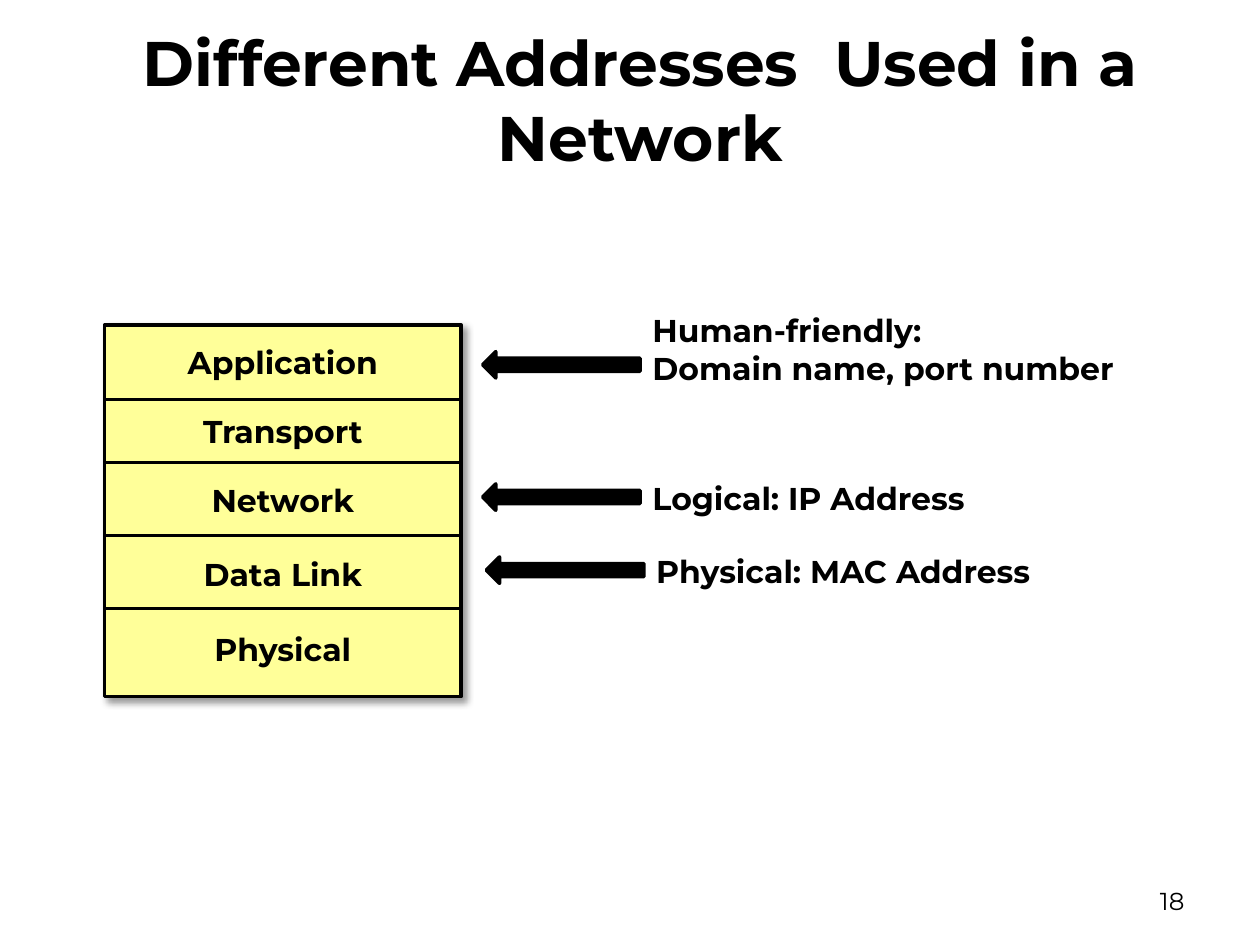
from lxml.etree import SubElement
from pptx import Presentation
from pptx.dml.color import RGBColor
from pptx.enum.shapes import MSO_CONNECTOR, MSO_SHAPE
from pptx.enum.text import MSO_ANCHOR, MSO_AUTO_SIZE, PP_ALIGN
from pptx.oxml.ns import qn
from pptx.util import Inches, Pt

COLORS = {"ink": "000000", "layer": "FFFF99", "page": "FFFFFF"}
FONT = "Montserrat"

STACK_LEFT, STACK_TOP, STACK_WIDTH, STACK_HEIGHT = 0.83, 2.58, 2.83, 2.95
LAYERS = [
    ("Application", 2.67),
    ("Transport", 3.22),
    ("Network", 3.77),
    ("Data Link", 4.36),
    ("Physical", 4.95),
]
DIVIDERS = [3.17, 3.67, 4.25, 4.83]
# Text, arrow left, arrow top, label top, label height
ADDRESSES = [
    ("Human-friendly:\vDomain name, port number", 3.83, 2.79, 2.42, 0.71),
    ("Logical: IP Address", 3.83, 3.84, 3.75, 0.4),
    ("Physical: MAC Address", 3.86, 4.42, 4.33, 0.4),
]
ARROW_WIDTH, ARROW_HEIGHT = 1.25, 0.21
LABEL_OFFSET, LABEL_WIDTH = 1.25, 4.64


def color(name):
    return RGBColor.from_string(COLORS[name])


class SlideBuilder:
    """Holds the current slide and draws elements in its style."""

    def __init__(self, page):
        self.page = page
        page.background.fill.solid()
        page.background.fill.fore_color.rgb = color("page")

    def text(self, words, left, top, width, height, size=18, bold=True,
             align=PP_ALIGN.LEFT, anchor=MSO_ANCHOR.TOP, grow=True):
        box = self.page.shapes.add_textbox(
            Inches(left), Inches(top), Inches(width), Inches(height))
        frame = box.text_frame
        frame.word_wrap = True
        frame.auto_size = MSO_AUTO_SIZE.SHAPE_TO_FIT_TEXT if grow else MSO_AUTO_SIZE.NONE
        frame.vertical_anchor = anchor
        frame.text = words
        for paragraph in frame.paragraphs:
            paragraph.alignment = align
            for span in paragraph.runs:
                span.font.name = FONT
                span.font.size = Pt(size)
                span.font.bold = bold
                span.font.color.rgb = color("ink")

    def shape(self, kind, left, top, width, height, fill):
        shape = self.page.shapes.add_shape(
            kind, Inches(left), Inches(top), Inches(width), Inches(height))
        shape.fill.solid()
        shape.fill.fore_color.rgb = color(fill)
        shape.line.color.rgb = color("ink")
        shape.line.width = Pt(2)
        shape.shadow.inherit = False
        return shape

    def shadow(self, shape, blur, distance, angle, opacity):
        """Add an outer shadow; lengths in points, angle in degrees, opacity in percent."""
        effects = shape._element.spPr.find(qn("a:effectLst"))
        outer = SubElement(
            effects, qn("a:outerShdw"), blurRad=str(Pt(blur)), dist=str(Pt(distance)),
            dir=str(angle * 60000), algn="tl", rotWithShape="0")
        tint = SubElement(outer, qn("a:srgbClr"), val=COLORS["ink"])
        SubElement(tint, qn("a:alpha"), val=str(opacity * 1000))

    def divider(self, left, top, width):
        line = self.page.shapes.add_connector(
            MSO_CONNECTOR.STRAIGHT, Inches(left), Inches(top),
            Inches(left + width), Inches(top))
        line.line.color.rgb = color("ink")
        line.line.width = Pt(1.5)
        SubElement(line._element.spPr, qn("a:effectLst"))


def main():
    deck = Presentation()
    deck.slide_width, deck.slide_height = Inches(10), Inches(7.5)
    builder = SlideBuilder(deck.slides.add_slide(deck.slide_layouts[6]))

    builder.text("Different Addresses  Used in a Network", 0.58, 0.33, 9, 0.91, size=36,
                 align=PP_ALIGN.CENTER, anchor=MSO_ANCHOR.MIDDLE, grow=False)
    builder.text("18", 7.17, 6.95, 2.33, 0.4, size=14, bold=False,
                 align=PP_ALIGN.RIGHT, anchor=MSO_ANCHOR.MIDDLE, grow=False)

    stack = builder.shape(MSO_SHAPE.RECTANGLE, STACK_LEFT, STACK_TOP,
                          STACK_WIDTH, STACK_HEIGHT, "layer")
    builder.shadow(stack, blur=4, distance=3, angle=45, opacity=40)
    for name, top in LAYERS:
        builder.text(name, STACK_LEFT, top, STACK_WIDTH, 0.4, align=PP_ALIGN.CENTER)

    for words, left, arrow_top, label_top, label_height in ADDRESSES:
        builder.shape(MSO_SHAPE.LEFT_ARROW, left, arrow_top, ARROW_WIDTH, ARROW_HEIGHT, "ink")
        builder.text(words, left + LABEL_OFFSET, label_top, LABEL_WIDTH, label_height)

    for top in DIVIDERS:
        builder.divider(STACK_LEFT, top, STACK_WIDTH)

    deck.save("out.pptx")


if __name__ == "__main__":
    main()
